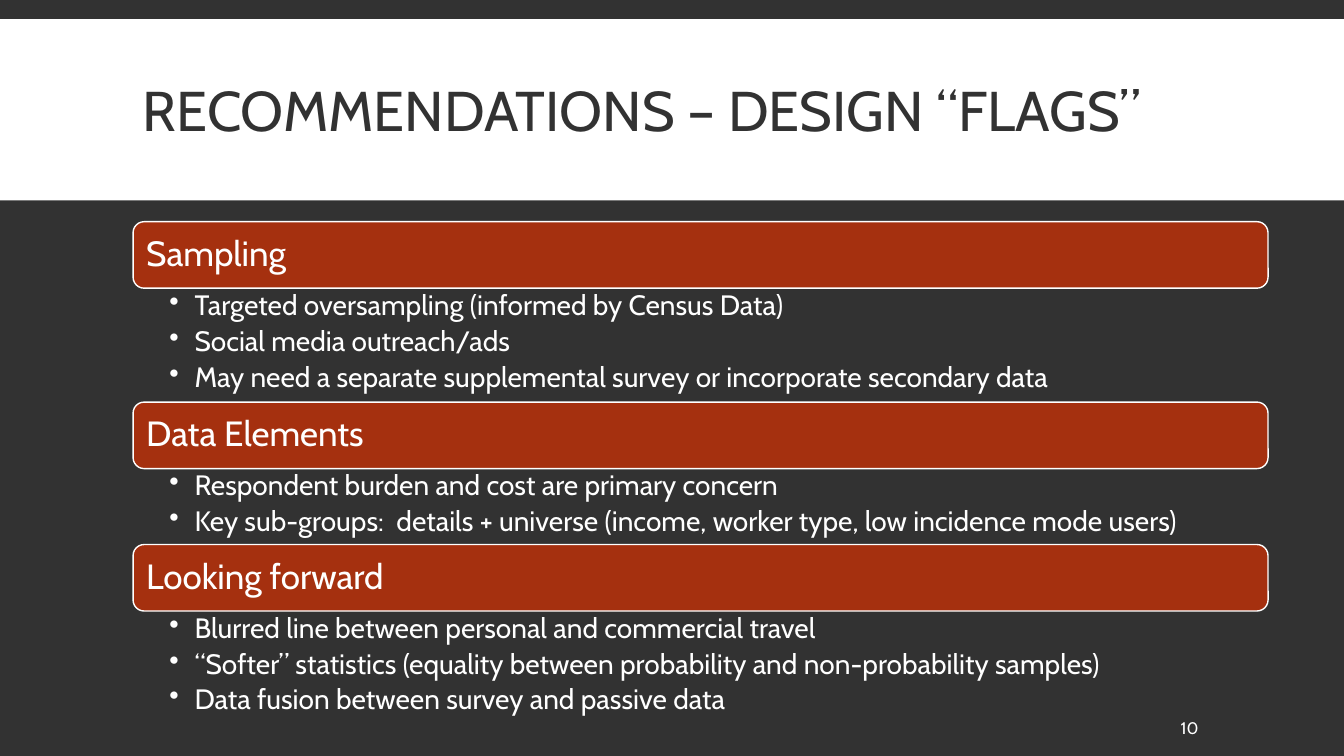
import pptx
import pptx.dml.color
import pptx.enum.shapes
import pptx.enum.text
import pptx.oxml.ns
import pptx.util
from lxml import etree

Inches = pptx.util.Inches
Pt = pptx.util.Pt
Shapes = pptx.enum.shapes.MSO_SHAPE
Anchor = pptx.enum.text.MSO_ANCHOR
Align = pptx.enum.text.PP_ALIGN

COLORS = {"dark": "323232", "white": "FFFFFF", "accent": "A5300F"}
SECTIONS = [
    ("Sampling", [
        "Targeted oversampling (informed by Census Data)",
        "Social media outreach/ads",
        "May need a separate supplemental survey or incorporate secondary data",
    ]),
    ("Data Elements", [
        "Respondent burden and cost are primary concern",
        "Key sub-groups:  details + universe (income, worker type, low incidence mode users)",
    ]),
    ("Looking forward", [
        "Blurred line between personal and commercial travel",
        "“Softer” statistics (equality between probability and non-probability samples)",
        "Data fusion between survey and passive data",
    ]),
]
LEFT, WIDTH = 9.9, 84.45
FIRST_ROW, BAR_ROWS, BULLET_ROWS = 29.33, 8.8, 5.02


class SlideBuilder:
    """Draws styled elements on one slide with a grid of 100 columns by 100 rows."""

    def __init__(self, font="Cabin"):
        self.font = font
        self.deck = pptx.Presentation()
        self.deck.slide_width, self.deck.slide_height = Inches(13.33), Inches(7.5)
        self.page = self.deck.slides.add_slide(self.deck.slide_layouts[6])
        self.paint(self.page.background.fill, "dark")

    def paint(self, fill, color):
        fill.solid()
        fill.fore_color.rgb = pptx.dml.color.RGBColor.from_string(COLORS[color])

    def place(self, column, row, columns, rows):
        across, down = self.deck.slide_width / 100, self.deck.slide_height / 100
        return [int(column * across), int(row * down), int(columns * across), int(rows * down)]

    def panel(self, kind, area, color, outline=None):
        shape = self.page.shapes.add_shape(kind, *self.place(*area))
        shape.shadow.inherit = False
        self.paint(shape.fill, color)
        if outline:
            self.paint(shape.line.fill, outline)
            shape.line.width = Pt(1)
        else:
            shape.line.fill.background()
        return shape

    def fill_text(self, shape, lines, size, color="white", insets=(0.1, 0.05, 0.1, 0.05),
                  anchor=Anchor.MIDDLE, bullets=False, **spacing):
        frame = shape.text_frame
        left, top, right, bottom = map(Inches, insets)
        settings = {"word_wrap": True, "vertical_anchor": anchor, "margin_left": left,
                    "margin_top": top, "margin_right": right, "margin_bottom": bottom}
        for name, value in settings.items():
            setattr(frame, name, value)
        for index, line in enumerate(lines):
            para = frame.add_paragraph() if index else frame.paragraphs[0]
            for name, value in {"alignment": Align.LEFT, **spacing}.items():
                setattr(para, name, value)
            span = para.add_run()
            for name, value in {"name": self.font, "size": Pt(size)}.items():
                setattr(span.font, name, value)
            span.text = line
            self.paint(span.font.fill, color)
            if bullets:
                self.bullet(para)

    def bullet(self, para):
        properties = para._p.get_or_add_pPr()
        properties.set("marL", str(Inches(0.25)))
        properties.set("indent", str(-Inches(0.25)))
        etree.SubElement(properties, pptx.oxml.ns.qn("a:buChar"), char="•")

    def text(self, area, lines, size, **style):
        box = self.page.shapes.add_textbox(*self.place(*area))
        self.fill_text(box, lines, size, **style)

    def section(self, row, heading, points):
        bar = self.panel(Shapes.ROUNDED_RECTANGLE, (LEFT, row, WIDTH, BAR_ROWS), "accent", "white")
        self.fill_text(bar, [heading], 25, insets=(0.1, 0.1, 0.1, 0.1), line_spacing=0.9)
        row += BAR_ROWS
        rows = len(points) * BULLET_ROWS
        self.text((LEFT, row, WIDTH, rows), points, 20, insets=(0.36, 0.03, 0.19, 0.03),
                  anchor=Anchor.TOP, bullets=True, line_spacing=0.9, space_after=Pt(4))
        return row + rows


def main():
    builder = SlideBuilder()
    builder.panel(Shapes.RECTANGLE, (0, 2.53, 100, 24), "white")
    builder.text((LEFT, 4.13, 80.27, 22), ["RECOMMENDATIONS – DESIGN “FLAGS”"], 40,
                 color="dark", line_spacing=0.85)
    row = FIRST_ROW
    for heading, points in SECTIONS:
        row = builder.section(row, heading, points)
    builder.text((87.47, 93.6, 7.73, 5.33), ["10"], 12, insets=(0.05, 0.05, 0.1, 0.05))
    builder.deck.save("out.pptx")


if __name__ == "__main__":
    main()
